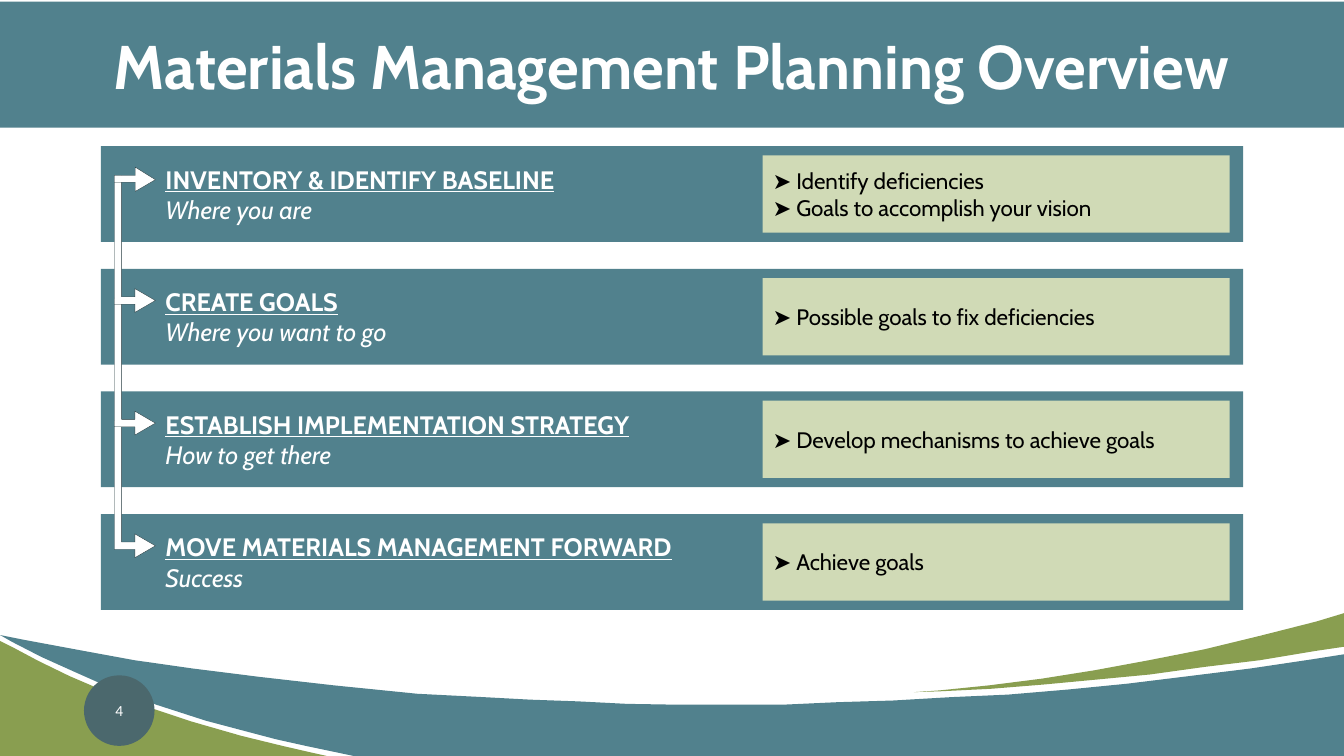
from dataclasses import dataclass

from pptx import Presentation
from pptx.dml.color import RGBColor
from pptx.enum.shapes import MSO_SHAPE as Preset
from pptx.enum.text import MSO_ANCHOR as Anchor, PP_ALIGN as Align
from pptx.shapes.autoshape import Shape
from pptx.slide import Slide
from pptx.util import Emu, Pt

TEAL = RGBColor(0x51, 0x81, 0x8D)
OLIVE = RGBColor(0x89, 0x9E, 0x50)
SAGE = RGBColor(0xD0, 0xDA, 0xB6)
SLATE = RGBColor(0x4B, 0x68, 0x6D)
OUTLINE = RGBColor(0x24, 0x39, 0x3E)
WHITE = RGBColor(0xFF, 0xFF, 0xFF)
BLACK = RGBColor(0x00, 0x00, 0x00)

COLUMNS, ROWS = 16, 9
CELL = 762000
BAR_TOP, BAR_STEP = 1.74, 1.46

Point = tuple[float, float]


@dataclass(frozen=True)
class Area:
    column: float
    row: float
    columns: float
    rows: float


@dataclass(frozen=True)
class Style:
    size: float
    color: RGBColor
    font: str = "Cabin"
    bold: bool = False
    italic: bool = False
    underline: bool = False


@dataclass(frozen=True)
class Stage:
    heading: str
    question: str
    outcomes: tuple[str, ...]


@dataclass(frozen=True)
class Wave:
    color: RGBColor
    points: tuple[Point, ...]


TITLE = Style(44, WHITE, bold=True)
HEADING = Style(18, WHITE, bold=True, underline=True)
QUESTION = Style(18, WHITE, italic=True)
OUTCOME = Style(16, BLACK)
NUMBER = Style(11, WHITE, font="Calibri")

STAGES = (
    Stage("INVENTORY & IDENTIFY BASELINE", "Where you are",
          ("➤ Identify deficiencies", "➤ Goals to accomplish your vision")),
    Stage("CREATE GOALS", "Where you want to go",
          ("➤ Possible goals to fix deficiencies",)),
    Stage("ESTABLISH IMPLEMENTATION STRATEGY", "How to get there",
          ("➤ Develop mechanisms to achieve goals",)),
    Stage("MOVE MATERIALS MANAGEMENT FORWARD", "Success",
          ("➤ Achieve goals",)),
)

WAVES = (
    Wave(TEAL, (
        (16, 7.79), (15.62, 7.85), (14.88, 7.96), (14.15, 8.05), (13.42, 8.14),
        (12.71, 8.21), (12, 8.27), (11.32, 8.3), (10.63, 8.34), (9.97, 8.36),
        (9.32, 8.39), (8.06, 8.39), (7.46, 8.38), (6.88, 8.35), (6.31, 8.33),
        (5.76, 8.3), (4.97, 8.26), (3.98, 8.16), (3.1, 8.06), (2.3, 7.96),
        (1.6, 7.86), (1, 7.75), (0.3, 7.62), (0, 7.56), (0.14, 7.64),
        (0.49, 7.82), (0.89, 8), (1.34, 8.2), (1.86, 8.39), (2.45, 8.58),
        (2.94, 8.71), (3.28, 8.8), (3.64, 8.88), (4.02, 8.96), (4.21, 9),
        (16, 9))),
    Wave(OLIVE, (
        (16, 7.3), (15.67, 7.4), (15, 7.57), (14.34, 7.73), (13.68, 7.86),
        (13.03, 7.98), (12.4, 8.08), (11.77, 8.16), (11.18, 8.22),
        (10.88, 8.24), (11.2, 8.23), (11.8, 8.2), (12.42, 8.15),
        (13.06, 8.09), (13.69, 8.03), (14.34, 7.94), (15, 7.86),
        (15.66, 7.75), (16, 7.7))),
    Wave(OLIVE, (
        (0, 7.63), (0, 9), (3.89, 9), (3.71, 8.96), (3.36, 8.88),
        (2.87, 8.76), (2.28, 8.59), (1.74, 8.41), (1.25, 8.23),
        (0.83, 8.05), (0.46, 7.87), (0.14, 7.7))),
)

FIRST_ARROW = ((1.36, 2.09), (1.61, 2.09), (1.61, 1.99), (1.85, 2.14),
               (1.61, 2.28), (1.61, 2.17), (1.36, 2.17))


def cells(count: float) -> Emu:
    return Emu(round(count * CELL))


def paint(shape: Shape, fill: RGBColor, outlined: bool = False) -> None:
    shape.shadow.inherit = False
    shape.fill.solid()
    shape.fill.fore_color.rgb = fill
    if outlined:
        shape.line.color.rgb = OUTLINE
        shape.line.width = Pt(0.25)
    else:
        shape.line.fill.background()


def add_preset(page: Slide, preset: Preset, area: Area, fill: RGBColor,
               outlined: bool = False) -> Shape:
    shape = page.shapes.add_shape(preset, cells(area.column), cells(area.row),
                                  cells(area.columns), cells(area.rows))
    paint(shape, fill, outlined)
    return shape


def add_outline(page: Slide, points: tuple[Point, ...], fill: RGBColor,
                outlined: bool = False) -> None:
    start, *rest = [(cells(column), cells(row)) for column, row in points]
    builder = page.shapes.build_freeform(*start)
    builder.add_line_segments(rest, close=True)
    paint(builder.convert_to_shape(), fill, outlined)


def write(box: Shape, lines: list[tuple[str, Style]],
          align: Align = Align.LEFT) -> None:
    frame = box.text_frame
    frame.word_wrap = True
    frame.vertical_anchor = Anchor.MIDDLE
    for index, (text, style) in enumerate(lines):
        para = frame.add_paragraph() if index else frame.paragraphs[0]
        para.alignment = align
        span = para.add_run()
        span.text = text
        span.font.name = style.font
        span.font.size = Pt(style.size)
        span.font.bold = style.bold
        span.font.italic = style.italic
        span.font.underline = style.underline
        span.font.color.rgb = style.color


def add_stage(page: Slide, stage: Stage, top: float) -> None:
    bar = add_preset(page, Preset.RECTANGLE, Area(1.2, top, 13.6, 1.14), TEAL)
    bar.text_frame.margin_left = cells(0.77)
    write(bar, [(stage.heading, HEADING), (stage.question, QUESTION)])
    panel = add_preset(page, Preset.RECTANGLE,
                       Area(9.08, top + 0.11, 5.56, 0.92), SAGE)
    write(panel, [(outcome, OUTCOME) for outcome in stage.outcomes])


def add_step_arrow(page: Slide, top: float) -> None:
    arrow = add_preset(page, Preset.BENT_UP_ARROW,
                       Area(0.79, top - 0.54, 1.63, 0.49), WHITE, True)
    arrow.rotation = 90
    for index, value in enumerate((0.18, 0.29, 0.5)):
        arrow.adjustments[index] = value


def main() -> None:
    deck = Presentation()
    deck.slide_width, deck.slide_height = cells(COLUMNS), cells(ROWS)
    page = deck.slides.add_slide(deck.slide_layouts[6])

    for wave in WAVES:
        add_outline(page, wave.points, wave.color)

    badge = add_preset(page, Preset.OVAL, Area(1, 8.04, 0.84, 0.84), SLATE)
    write(badge, [("4", NUMBER)], Align.CENTER)

    banner = add_preset(page, Preset.RECTANGLE, Area(0, 0.02, COLUMNS, 1.5), TEAL)
    write(banner, [("Materials Management Planning Overview", TITLE)], Align.CENTER)

    tops = [BAR_TOP + index * BAR_STEP for index in range(len(STAGES))]
    for stage, top in zip(STAGES, tops):
        add_stage(page, stage, top)
    for top in reversed(tops[1:]):
        add_step_arrow(page, top)
    add_outline(page, FIRST_ARROW, WHITE, True)

    deck.save("out.pptx")


if __name__ == "__main__":
    main()
